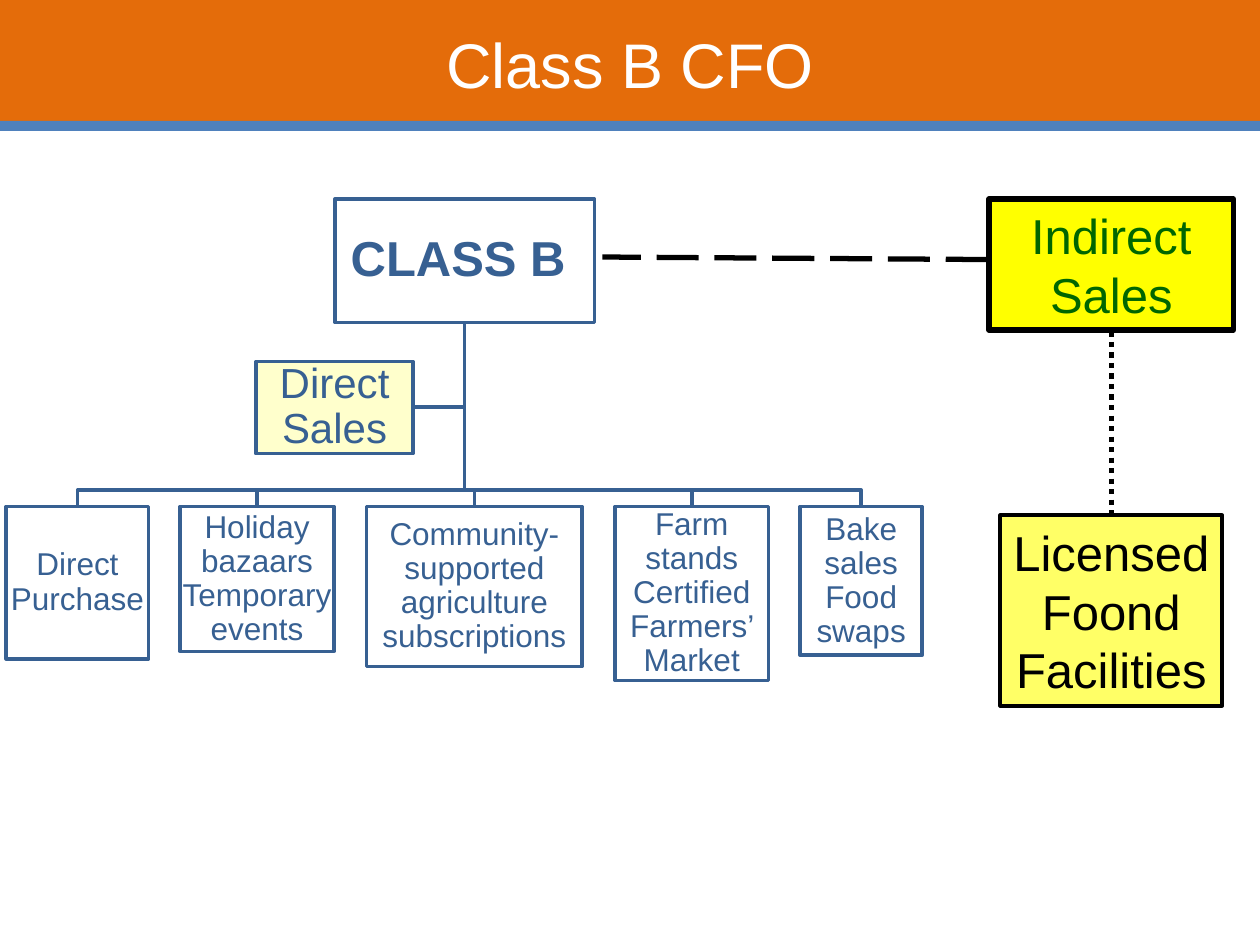
"""Build the Class B CFO sales chart on one slide."""
from dataclasses import dataclass

from lxml.etree import SubElement
from pptx import Presentation
from pptx.dml.color import RGBColor as Rgb
from pptx.enum.dml import MSO_LINE as Dash
from pptx.enum.shapes import MSO_CONNECTOR as Link, MSO_SHAPE as Kind
from pptx.enum.text import MSO_ANCHOR as Anchor, PP_ALIGN as Align
from pptx.oxml.ns import qn
from pptx.util import Inches, Pt


@dataclass(frozen=True)
class Theme:
    font: str = "Arial"
    band: str = "E46C0A"
    bar: str = "4F81BD"
    blue: str = "376092"
    cream: str = "FFFFCC"
    sun: str = "FFFF00"
    lemon: str = "FFFF66"
    green: str = "006600"
    black: str = "000000"
    white: str = "FFFFFF"
    head: int = 36
    big: int = 28
    mid: int = 24
    small: int = 18


def write(shape, text, size, color, font, bold=False, inset=None, lead=None):
    frame = shape.text_frame
    frame.word_wrap = True
    frame.vertical_anchor = Anchor.MIDDLE
    if inset is not None:
        frame.margin_left = frame.margin_right = Inches(inset)
        frame.margin_top = frame.margin_bottom = Inches(inset)
    para = frame.paragraphs[0]
    para.alignment = Align.CENTER
    if lead:
        para.line_spacing = lead
    run = para.add_run()
    run.text = text
    run.font.name = font
    run.font.size = Pt(size)
    run.font.bold = bold
    run.font.color.rgb = Rgb.from_string(color)


class Board:
    """Draw on a slide with a grid of 100 columns by 75 rows."""

    def __init__(self, theme):
        self.theme = theme
        self.deck = Presentation()
        self.deck.slide_width, self.deck.slide_height = Inches(10), Inches(7.5)
        self.slide = self.deck.slides.add_slide(self.deck.slide_layouts[5])
        self.shapes = self.slide.shapes

    def grid(self, *cells):
        return [round(cell * self.deck.slide_width / 100) for cell in cells]

    def paint(self, shape, fill=None, line=None, width=2):
        shape.shadow.inherit = False
        if fill:
            shape.fill.solid()
            shape.fill.fore_color.rgb = Rgb.from_string(fill)
        else:
            shape.fill.background()
        if line:
            shape.line.color.rgb = Rgb.from_string(line)
            shape.line.width = Pt(width)
        else:
            shape.line.fill.background()

    def title(self, text, area):
        head = self.shapes.title
        head.left, head.top, head.width, head.height = self.grid(*area)
        head.fill.solid()
        head.fill.fore_color.rgb = Rgb.from_string(self.theme.band)
        write(head, text, self.theme.head, self.theme.white, self.theme.font)

    def box(self, area, fill=None, line=None, width=2, text=None, **style):
        shape = self.shapes.add_shape(Kind.RECTANGLE, *self.grid(*area))
        self.paint(shape, fill, line, width)
        if text:
            write(shape, text, font=self.theme.font, **style)

    def node(self, area, text, size, fill=None, bold=False, inset=0.02):
        blue = self.theme.blue
        self.box(area, fill, blue, text=text, size=size, color=blue,
                 bold=bold, inset=inset, lead=0.9)

    def branch(self, *points):
        start, *rest = [self.grid(*point) for point in points]
        pen = self.shapes.build_freeform(*start)
        pen.add_line_segments(rest, close=False)
        self.paint(pen.convert_to_shape(), line=self.theme.blue)

    def link(self, start, end, dash):
        line = self.shapes.add_connector(Link.STRAIGHT, *self.grid(*start, *end))
        line.line.color.rgb = Rgb.from_string(self.theme.black)
        line.line.width = Pt(3)
        line.line.dash_style = dash
        SubElement(line._element.spPr, qn("a:effectLst"))


def main():
    theme = Theme()
    board = Board(theme)
    board.title("Class B CFO", (0, 0, 100, 10.1))
    board.box((0, 9.6, 100, 0.8), theme.bar)

    stem, base, rail, top = 36.85, 25.6, 38.9, 40.2
    leaves = [
        (0.5, 11.3, 12.1, "Direct Purchase"),
        (14.3, 12.2, 11.5, "Holiday bazaars Temporary events"),
        (29.1, 17.1, 12.7, "Community-supported agriculture subscriptions"),
        (48.8, 12.2, 13.8, "Farm stands Certified Farmers’ Market"),
        (63.5, 9.7, 11.8, "Bake sales Food swaps"),
    ]
    board.branch((stem, base), (stem, 32.3), (32.8, 32.3))
    for left, width, _, _ in leaves:
        mid = left + width / 2
        board.branch((stem, base), (stem, rail), (mid, rail), (mid, top))

    board.node((26.6, 15.8, 20.6, 9.8), "CLASS B ", theme.big, bold=True)
    for left, width, height, text in leaves:
        board.node((left, top, width, height), text, theme.small, inset=0.01)
    board.node((20.3, 28.7, 12.5, 7.3), "Direct Sales", theme.mid, theme.cream)

    board.box((78.5, 15.8, 19.4, 10.4), theme.sun, theme.black, 3,
              "Indirect Sales", size=theme.big, color=theme.green)
    board.link((78.4, 20.6), (47.8, 20.4), Dash.LONG_DASH)
    board.link((88.2, 26.3), (88.2, 40.9), Dash.ROUND_DOT)
    board.box((79.4, 40.9, 17.6, 15.1), theme.lemon, theme.black, 2.25,
              "Licensed Foond Facilities", size=theme.big, color=theme.black)
    board.deck.save("out.pptx")


if __name__ == "__main__":
    main()
